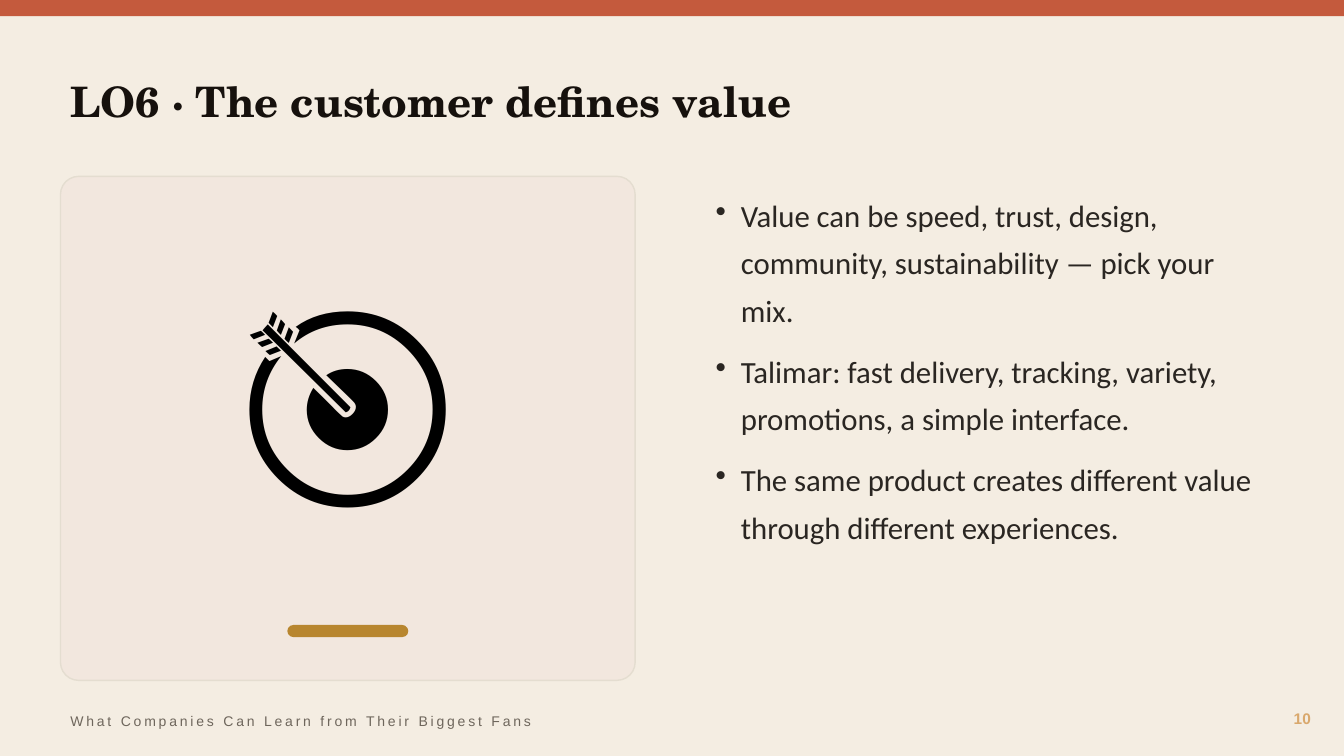
from lxml import etree
from pptx import Presentation
from pptx import util as u
from pptx.dml.color import RGBColor
from pptx.enum import shapes, text
from pptx.oxml import ns

PX = 9144  # 100 px to the inch
CREAM = RGBColor(0xF4, 0xED, 0xE2)
TERRACOTTA = RGBColor(0xC4, 0x5A, 0x3D)
BLUSH = RGBColor(0xF2, 0xE7, 0xDE)
CARD_EDGE = RGBColor(0xE4, 0xDD, 0xD0)
GOLD = RGBColor(0xB8, 0x86, 0x2F)
SAND = RGBColor(0xD9, 0xA8, 0x6C)
INK = RGBColor(0x16, 0x11, 0x0D)
BODY = RGBColor(0x2A, 0x26, 0x22)
GREY = RGBColor(0x6E, 0x66, 0x5C)
BLACK = RGBColor(0, 0, 0)

LEFT = 60
COLUMN = 570
CARD_TOP = 175
BULLET_INDENT = 25

prs = Presentation()
prs.slide_width, prs.slide_height = 1333 * PX, 750 * PX
slide = prs.slides.add_slide(prs.slide_layouts[6])
slide.background.fill.solid()
slide.background.fill.fore_color.rgb = CREAM


def add_panel(kind, box, fill, radius=None):
    panel = slide.shapes.add_shape(kind, *(n * PX for n in box))
    panel.shadow.inherit = False
    panel.fill.solid()
    panel.fill.fore_color.rgb = fill
    panel.line.fill.background()
    if radius is not None:
        panel.adjustments[0] = radius
    return panel


def add_text(box, lines, size, font, color, bold=False,
             align=text.PP_ALIGN.LEFT, anchor=text.MSO_ANCHOR.MIDDLE):
    """Add a wrapped text box, one paragraph a line, and return its paragraphs."""
    frame = slide.shapes.add_textbox(*(n * PX for n in box)).text_frame
    frame.word_wrap = True
    frame.vertical_anchor = anchor
    frame.text = "\n".join(lines)
    for paragraph in frame.paragraphs:
        paragraph.alignment = align
        for run in paragraph.runs:
            run.font.size = u.Pt(size)
            run.font.name = font
            run.font.bold = bold
            run.font.color.rgb = color
    return frame.paragraphs


add_panel(shapes.MSO_SHAPE.RECTANGLE, (0, 0, 1333, 16), TERRACOTTA)
add_text((LEFT, 50, 1210, 100), ["LO6 · The customer defines value"],
         30, "TeX Gyre Schola", INK, bold=True)

# Illustration card
card = add_panel(shapes.MSO_SHAPE.ROUNDED_RECTANGLE,
                 (LEFT, CARD_TOP, COLUMN, 500), BLUSH, 0.036)
card.line.color.rgb = CARD_EDGE
card.line.width = u.Pt(1)
add_text((LEFT, CARD_TOP, COLUMN, 410), ["🎯"], 150, "Calibri", BLACK,
         align=text.PP_ALIGN.CENTER)
add_panel(shapes.MSO_SHAPE.ROUNDED_RECTANGLE,
          (LEFT + (COLUMN - 120) // 2, 620, 120, 12), GOLD, 0.5)

# Key points
points = add_text((700, 180, COLUMN, 500), [
    "Value can be speed, trust, design, community, sustainability — pick your mix.",
    "Talimar: fast delivery, tracking, variety, promotions, a simple interface.",
    "The same product creates different value through different experiences.",
], 22, "Calibri", BODY, anchor=text.MSO_ANCHOR.TOP)
for point in points:
    point.line_spacing = 1.28
    point.space_after = u.Pt(10)
    properties = point._p.get_or_add_pPr()
    properties.set("marL", str(BULLET_INDENT * PX))
    properties.set("indent", str(-BULLET_INDENT * PX))
    etree.SubElement(properties, ns.qn("a:buChar")).set("char", "•")

# Footer
add_text((1220, 695, 90, 35), ["10"], 11, "Arial", SAND, bold=True,
         align=text.PP_ALIGN.RIGHT)
footer = add_text((LEFT, 700, 800, 30),
                  ["What Companies Can Learn from Their Biggest Fans"],
                  10, "Arial", GREY)
footer[0].runs[0].font._element.set("spc", "200")

prs.save("out.pptx")
